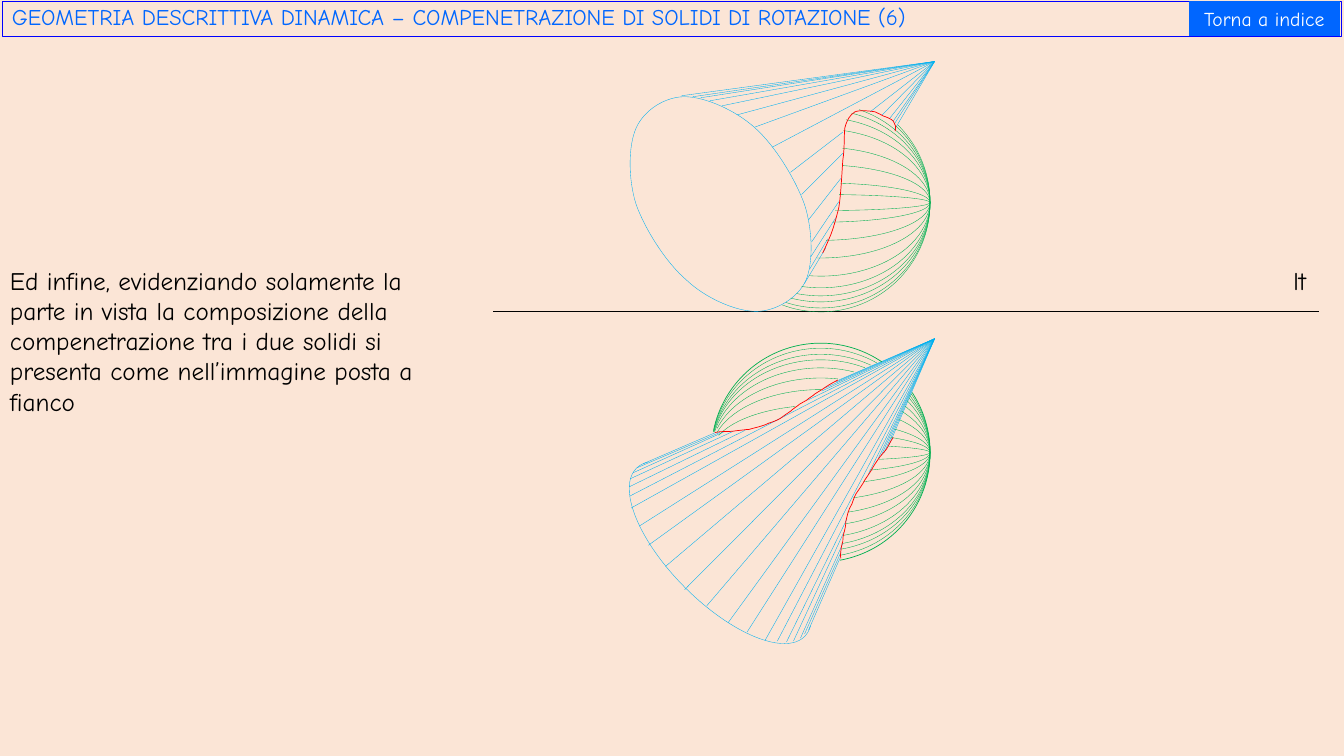
from pptx import Presentation
from pptx.dml.color import RGBColor
from pptx.enum.shapes import MSO_CONNECTOR as Link, MSO_SHAPE as Preset
from pptx.enum.text import MSO_ANCHOR as Anchor, MSO_AUTO_SIZE as AutoSize, PP_ALIGN as Align
from pptx.oxml.ns import qn
from pptx.oxml.xmlchemy import OxmlElement
from pptx.util import Cm, Pt

PEACH = RGBColor(0xFB, 0xE5, 0xD6)
BLACK = RGBColor(0x00, 0x00, 0x00)
WHITE = RGBColor(0xFF, 0xFF, 0xFF)
CONE_BLUE = RGBColor(0x00, 0xB0, 0xF0)
SPHERE_GREEN = RGBColor(0x00, 0xB0, 0x50)
CURVE_RED = RGBColor(0xFF, 0x00, 0x00)
FRAME_BLUE = RGBColor(0x00, 0x00, 0xFF)
TITLE_BLUE = RGBColor(0x00, 0x66, 0xFF)

# Sphere, in inches: one diameter, one centre per view
DIAMETER = 2.17
CENTRE_X = 8.14
ELEVATION_Y, PLAN_Y = 2.01, 4.49

# Cone: apex and far ends of the uninterrupted generatrices
ELEVATION_APEX = (9.27, 0.61)
ELEVATION_ENDS = [
    (6.76, 0.95), (6.87, 0.96), (6.95, 0.97), (7.04, 1.0), (7.16, 1.05), (7.31, 1.14),
    (7.49, 1.26), (7.66, 1.46), (8.63, 1.11), (8.75, 1.14), (8.82, 1.18), (8.86, 1.2),
    (8.87, 1.23), (8.87, 1.29)]
PLAN_APEX = (9.27, 3.36)
PLAN_ENDS = [
    (8.32, 3.77), (8.29, 3.79), (8.18, 3.85), (8.15, 3.88), (8.01, 3.97), (6.25, 4.92),
    (6.26, 5.04), (6.34, 5.22), (6.43, 5.41), (6.6, 5.62), (6.79, 5.85), (7.01, 6.01),
    (7.22, 6.18), (7.41, 6.27), (7.59, 6.35), (7.71, 6.36), (8.61, 4.71), (8.71, 4.55),
    (8.74, 4.52), (8.77, 4.49), (8.82, 4.41)]
# Generatrices that leave the sphere at the intersection curve
EMERGING = [
    ((8.36, 1.31), (7.84, 1.71)), ((8.36, 1.52), (7.95, 1.93)), ((8.34, 1.77), (8.02, 2.18)),
    ((8.32, 2.0), (8.05, 2.4)), ((8.29, 2.16), (8.04, 2.55)), ((8.21, 2.37), (8.03, 2.67)),
    ((8.19, 2.46), (7.98, 2.81)), ((7.39, 4.27), (6.24, 4.83)), ((7.27, 4.28), (6.25, 4.75)),
    ((7.19, 4.28), (6.28, 4.69)), ((7.14, 4.29), (6.32, 4.64)), ((7.1, 4.29), (6.38, 4.6)),
    ((8.4, 5.15), (7.8, 6.37)), ((8.37, 5.28), (7.87, 6.36)), ((8.36, 5.39), (7.94, 6.33)),
    ((8.34, 5.48), (7.98, 6.29)), ((8.33, 5.54), (8.02, 6.25))]

# Meridians: ellipse height, then start and end of the arc
ELEVATION_MERIDIANS = [
    (2.09, 150.45, 27.3), (1.97, 151.5, 40.48), (1.85, 153.11, 42.59), (1.69, 154.24, 43.8),
    (1.46, 156.51, 43.41), (1.1, 159.87, 40.89), (0.75, 166.95, 35.63), (0.39, 181.08, 26.45),
    (0.16, 198.71, 13.89)]
PLAN_LEFT_MERIDIANS = [
    (2.07, 114.54, 181.26), (1.95, 114.54, 179.86), (1.84, 114.54, 178.5), (1.68, 114.75, 175.45),
    (1.48, 115.88, 169.85), (1.25, 114.55, 162.3), (0.94, 113.72, 144.63)]
PLAN_RIGHT_MERIDIANS = [
    (2.07, 168.66, 19.81), (1.95, 169.15, 19.65), (1.84, 170.01, 19.02), (1.68, 171.06, 18.66),
    (1.45, 173.34, 17.22), (1.22, 176.61, 16.13), (0.94, 183.24, 13.85), (0.63, 195.35, 10.6),
    (0.39, 204.13, 7.27), (0.16, 212.01, 3.23)]

# Bézier curves: start, then two control points and an end per piece
CONE_BASE = [
    (6.79, 0.96), (6.6, 0.96), (6.39, 1.09), (6.31, 1.27), (6.23, 1.45), (6.23, 1.78), (6.31, 2.03),
    (6.4, 2.28), (6.61, 2.61), (6.81, 2.78), (7.0, 2.96), (7.3, 3.09), (7.5, 3.09),
    (7.69, 3.09), (7.91, 2.96), (7.99, 2.79), (8.07, 2.61), (8.06, 2.28), (7.98, 2.03),
    (7.89, 1.78), (7.69, 1.45), (7.49, 1.27), (7.29, 1.09), (6.99, 0.96), (6.79, 0.96)]
INTERSECTIONS = [
    [(8.88, 1.3), (8.89, 1.26), (8.88, 1.23), (8.86, 1.2), (8.84, 1.18), (8.79, 1.16), (8.76, 1.15),
     (8.73, 1.13), (8.72, 1.13), (8.68, 1.11), (8.63, 1.1), (8.52, 1.09), (8.48, 1.11),
     (8.43, 1.14), (8.4, 1.19), (8.38, 1.27), (8.37, 1.35), (8.38, 1.46), (8.36, 1.59),
     (8.35, 1.73), (8.34, 1.94), (8.32, 2.06), (8.29, 2.18), (8.27, 2.25), (8.24, 2.33),
     (8.21, 2.4), (8.19, 2.45), (8.16, 2.51)],
    [(7.09, 4.29), (7.15, 4.28), (7.2, 4.28), (7.24, 4.28), (7.28, 4.28), (7.3, 4.27), (7.33, 4.27),
     (7.36, 4.27), (7.39, 4.26), (7.43, 4.26), (7.46, 4.25), (7.51, 4.24), (7.54, 4.23),
     (7.57, 4.22), (7.58, 4.22), (7.62, 4.2), (7.65, 4.19), (7.71, 4.17), (7.74, 4.15),
     (7.78, 4.12), (7.81, 4.1), (7.84, 4.08), (7.87, 4.05), (7.91, 4.03), (7.93, 4.01),
     (7.96, 4.0), (7.97, 3.98), (8.0, 3.97), (8.02, 3.95), (8.06, 3.93), (8.08, 3.91),
     (8.11, 3.89), (8.16, 3.86), (8.16, 3.86), (8.2, 3.83), (8.25, 3.8), (8.31, 3.77)],
    [(8.34, 5.54), (8.33, 5.52), (8.34, 5.5), (8.34, 5.47), (8.34, 5.45), (8.35, 5.4), (8.36, 5.37),
     (8.36, 5.34), (8.36, 5.32), (8.37, 5.29), (8.38, 5.26), (8.39, 5.21), (8.39, 5.17),
     (8.4, 5.14), (8.4, 5.12), (8.41, 5.09), (8.42, 5.06), (8.43, 5.03), (8.45, 5.0),
     (8.46, 4.97), (8.47, 4.94), (8.49, 4.9), (8.51, 4.87), (8.56, 4.8), (8.58, 4.76),
     (8.61, 4.72), (8.61, 4.71), (8.64, 4.67), (8.66, 4.63), (8.7, 4.57), (8.73, 4.53),
     (8.75, 4.5), (8.77, 4.49), (8.79, 4.46), (8.81, 4.43), (8.83, 4.38), (8.86, 4.34)]]


def inches(*values):
    return [Cm(2.54 * value) for value in values]


class Drawing:
    font = "Comic Neue"
    thin = 0.25

    def __init__(self, slide):
        self.shapes = slide.shapes
        slide.background.fill.solid()
        slide.background.fill.fore_color.rgb = PEACH

    def outline(self, shape, color, width):
        shape.shadow.inherit = False
        shape.fill.background()
        shape.line.color.rgb = color
        shape.line.width = Pt(width)

    def line(self, start, end, color):
        segment = self.shapes.add_connector(Link.STRAIGHT, *inches(*start, *end))
        segment.line.color.rgb = color
        segment.line.width = Pt(self.thin)
        segment._element.spPr.append(OxmlElement("a:effectLst"))

    def arc(self, box, start, end, color, width=thin, flip=False, rotation=0):
        arc = self.shapes.add_shape(Preset.ARC, *inches(*box))
        arc.adjustments[0], arc.adjustments[1] = start, end
        arc.rotation = rotation
        if flip:
            arc._element.spPr.xfrm.set("flipV", "1")
        self.outline(arc, color, width)

    def sphere_arc(self, centre_y, height, start, end, **options):
        box = (CENTRE_X - DIAMETER / 2, centre_y - height / 2, DIAMETER, height)
        self.arc(box, start, end, SPHERE_GREEN, **options)

    def curve(self, points, color, width, close=False):
        first, *rest = [inches(*point) for point in points]
        builder = self.shapes.build_freeform(*first)
        builder.add_line_segments(rest, close=close)
        curve = builder.convert_to_shape()
        # Turn every three line ends into one Bézier piece
        ends = list(curve._element.iter(qn("a:lnTo")))
        for trio in zip(ends[::3], ends[1::3], ends[2::3]):
            piece = OxmlElement("a:cubicBezTo")
            trio[0].addprevious(piece)
            for end in trio:
                piece.append(end[0])
                end.getparent().remove(end)
        self.outline(curve, color, width)

    def letter(self, shape, text, size, color, align=Align.LEFT, spacing=None):
        shape.text_frame.word_wrap = True
        paragraph = shape.text_frame.paragraphs[0]
        paragraph.text = text
        paragraph.alignment = align
        paragraph.line_spacing = spacing
        paragraph.font.name, paragraph.font.size = self.font, Pt(size)
        paragraph.font.color.rgb = color

    def text(self, box, text):
        note = self.shapes.add_textbox(*inches(*box))
        note.text_frame.auto_size = AutoSize.SHAPE_TO_FIT_TEXT
        self.letter(note, text, 18, BLACK)

    def title(self, box, text):
        frame = self.shapes.add_shape(Preset.RECTANGLE, *inches(*box))
        self.outline(frame, FRAME_BLUE, self.thin)
        frame.text_frame.vertical_anchor = Anchor.MIDDLE
        self.letter(frame, text, 16, TITLE_BLUE, spacing=0.9)

    def button(self, box, text):
        button = self.shapes.add_shape(Preset.ACTION_BUTTON_CUSTOM, *inches(*box))
        button.shadow.inherit = False
        button.fill.solid()
        button.fill.fore_color.rgb = TITLE_BLUE
        button.line.fill.background()
        button.text_frame.vertical_anchor = Anchor.MIDDLE
        self.letter(button, text, 14, WHITE, Align.CENTER)


def main():
    deck = Presentation()
    deck.slide_width, deck.slide_height = inches(13.33, 7.5)
    drawing = Drawing(deck.slides.add_slide(deck.slide_layouts[6]))

    # Ground line
    drawing.line((4.89, 3.09), (13.08, 3.09), BLACK)
    drawing.text((12.73, 2.58, 0.56, 0.4), "lt")

    # Cone
    drawing.curve(CONE_BASE, CONE_BLUE, drawing.thin, close=True)
    drawing.arc((6.65, 4.3, 0.99, 2.36), 158.61, 57.71, CONE_BLUE, rotation=135)
    generatrices = [(ELEVATION_APEX, end) for end in ELEVATION_ENDS]
    generatrices += [(PLAN_APEX, end) for end in PLAN_ENDS]
    for start, end in generatrices + EMERGING:
        drawing.line(start, end, CONE_BLUE)

    # Sphere
    drawing.sphere_arc(ELEVATION_Y, DIAMETER, 188.97, 66.34)
    for start, end in ((114.92, 182.37), (196.02, 47.9)):
        drawing.sphere_arc(PLAN_Y, DIAMETER, start, end, width=0.5)
    for centre_y, meridians, flip in ((ELEVATION_Y, ELEVATION_MERIDIANS, True),
                                      (PLAN_Y, PLAN_LEFT_MERIDIANS, False),
                                      (PLAN_Y, PLAN_RIGHT_MERIDIANS, True)):
        for meridian in meridians:
            drawing.sphere_arc(centre_y, *meridian, flip=flip)

    # Intersection curves
    for points in INTERSECTIONS:
        drawing.curve(points, CURVE_RED, 0.5)

    # Title bar and explanation
    drawing.title((0.02, 0.01, 13.28, 0.35),
                  "GEOMETRIA DESCRITTIVA DINAMICA – COMPENETRAZIONE DI SOLIDI DI ROTAZIONE (6)")
    drawing.text((0, 2.58, 4.2, 1.62),
                 "Ed infine, evidenziando solamente la parte in vista la composizione della "
                 "compenetrazione tra i due solidi si presenta come nell’immagine posta a fianco")
    drawing.button((11.79, 0.01, 1.5, 0.35), "Torna a indice")

    deck.save("out.pptx")


if __name__ == "__main__":
    main()
